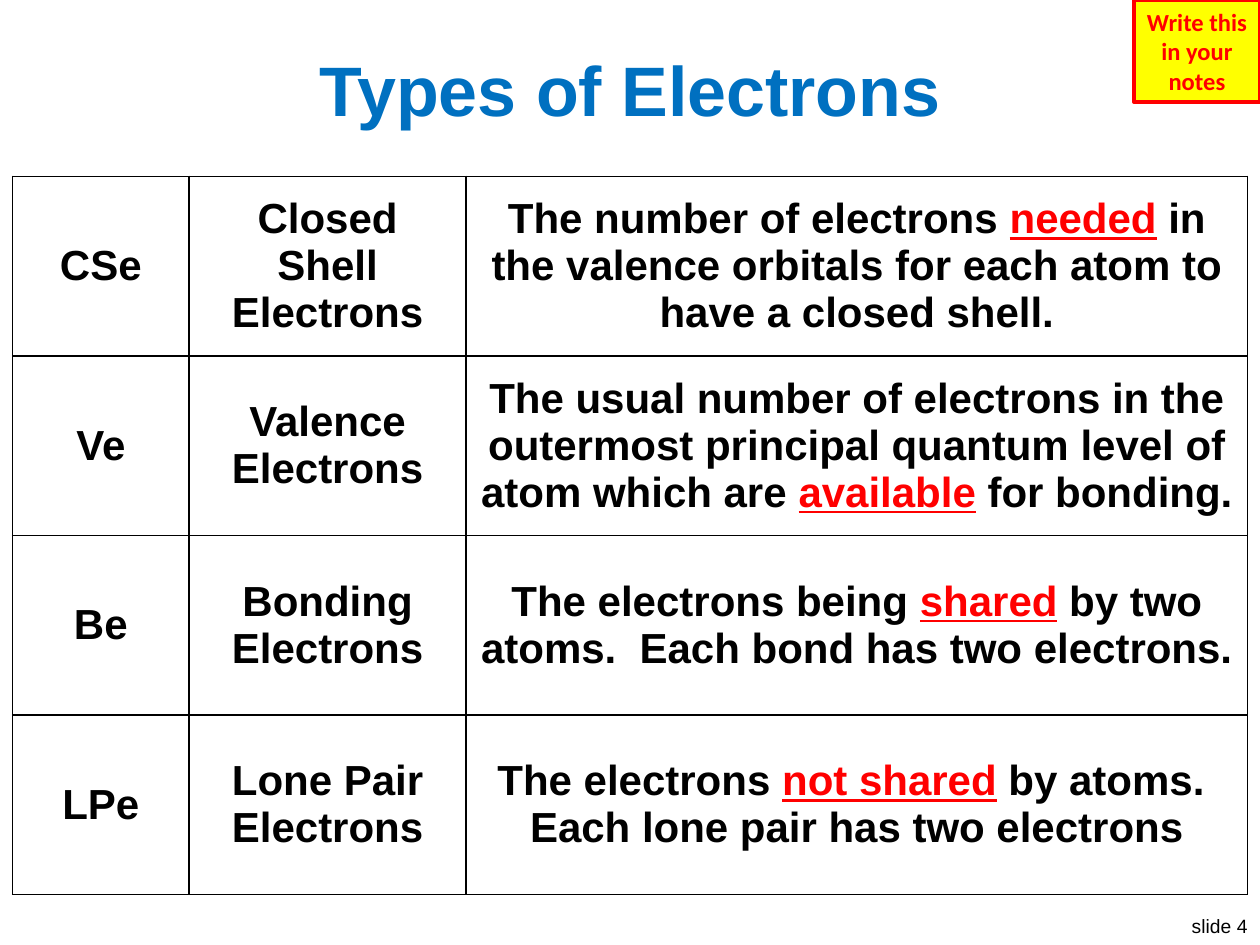
from dataclasses import dataclass

from lxml import etree
from pptx import Presentation
from pptx.dml.color import RGBColor
from pptx.enum.shapes import MSO_SHAPE
from pptx.enum.text import MSO_ANCHOR, PP_ALIGN
from pptx.oxml.ns import qn
from pptx.util import Emu, Pt

EMU_PER_PX = 9144
BLACK = RGBColor(0x00, 0x00, 0x00)
WHITE = RGBColor(0xFF, 0xFF, 0xFF)
BLUE = RGBColor(0x00, 0x70, 0xC0)
RED = RGBColor(0xFF, 0x00, 0x00)
YELLOW = RGBColor(0xFF, 0xFF, 0x00)
CENTER, RIGHT = PP_ALIGN.CENTER, PP_ALIGN.RIGHT
MIDDLE = MSO_ANCHOR.MIDDLE
RECTANGLE = MSO_SHAPE.RECTANGLE
COLUMN_WIDTHS = (140, 220, 620)
TABLE_HEIGHT = 570
BORDERS = ("a:lnL", "a:lnR", "a:lnT", "a:lnB")


@dataclass(frozen=True)
class ElectronType:
    symbol: str
    name: str
    before: str
    keyword: str
    after: str


ELECTRON_TYPES = (
    ElectronType("CSe", "Closed Shell Electrons", "The number of electrons ", "needed",
                 " in the valence orbitals for each atom to have a closed shell."),
    ElectronType("Ve", "Valence Electrons",
                 "The usual number of electrons in the outermost principal quantum level "
                 "of atom which are ", "available", " for bonding."),
    ElectronType("Be", "Bonding Electrons", "The electrons being ", "shared",
                 " by two atoms.  Each bond has two electrons."),
    ElectronType("LPe", "Lone Pair Electrons", "The electrons ", "not shared",
                 " by atoms.  Each lone pair has two electrons"),
)


def px(length: int) -> Emu:
    return Emu(length * EMU_PER_PX)


def place(shape, left: int, top: int, width: int, height: int) -> None:
    shape.left, shape.top = px(left), px(top)
    shape.width, shape.height = px(width), px(height)


def format_text(frame, size: int, color: RGBColor, align=CENTER,
                font: str = "Arial", bold: bool = True) -> None:
    for para in frame.paragraphs:
        para.alignment = align
        for span in para.runs:
            span.font.name = font
            span.font.size = Pt(size)
            span.font.bold = bold
            span.font.color.rgb = color


def border_cell(cell) -> None:
    properties = cell._tc.get_or_add_tcPr()
    for position, tag in enumerate(BORDERS):
        line = etree.Element(qn(tag), w=str(Pt(1)))
        fill = etree.SubElement(line, qn("a:solidFill"))
        etree.SubElement(fill, qn("a:srgbClr"), val=str(BLACK))
        properties.insert(position, line)


def write_cell(cell, *parts: str) -> None:
    para = cell.text_frame.paragraphs[0]
    for part in parts:
        para.add_run().text = part
    format_text(cell.text_frame, 24, BLACK)
    cell.vertical_anchor = MIDDLE
    cell.fill.solid()
    cell.fill.fore_color.rgb = WHITE
    border_cell(cell)


def add_title(page) -> None:
    title = page.shapes.title
    place(title, 20, 30, 960, 80)
    title.text_frame.text = "Types of Electrons"
    title.text_frame.vertical_anchor = MIDDLE
    format_text(title.text_frame, 40, BLUE)


def add_electron_table(page) -> None:
    table = page.shapes.add_table(len(ELECTRON_TYPES), len(COLUMN_WIDTHS), px(10), px(140),
                                  px(sum(COLUMN_WIDTHS)), px(TABLE_HEIGHT)).table
    table.first_row = table.horz_banding = False
    for column, width in zip(table.columns, COLUMN_WIDTHS):
        column.width = px(width)
    for row, kind in zip(table.rows, ELECTRON_TYPES):
        symbol, name, meaning = row.cells
        write_cell(symbol, kind.symbol)
        write_cell(name, kind.name)
        write_cell(meaning, kind.before, kind.keyword, kind.after)
        keyword = meaning.text_frame.paragraphs[0].runs[1]
        keyword.font.color.rgb = RED
        keyword.font.underline = True


def add_reminder(page) -> None:
    box = page.shapes.add_shape(RECTANGLE, px(900), px(0), px(100), px(81))
    box.shadow.inherit = False
    box.fill.solid()
    box.fill.fore_color.rgb = YELLOW
    box.line.color.rgb = RED
    box.line.width = Pt(2.25)
    box.text_frame.word_wrap = True
    box.text_frame.text = "Write this in your notes"
    format_text(box.text_frame, 14, RED, font="Calibri")


def add_slide_number(page) -> None:
    box = page.shapes.add_textbox(px(925), px(721), px(75), px(29))
    box.text_frame.word_wrap = False
    box.text_frame.text = "slide 4"
    format_text(box.text_frame, 11, BLACK, align=RIGHT, bold=False)


def main() -> None:
    """Build the slide that defines the types of electrons."""
    deck = Presentation()
    deck.slide_width, deck.slide_height = px(1000), px(750)
    page = deck.slides.add_slide(deck.slide_layouts.get_by_name("Title Only"))
    add_slide_number(page)
    add_title(page)
    add_electron_table(page)
    add_reminder(page)
    deck.save("out.pptx")


if __name__ == "__main__":
    main()
